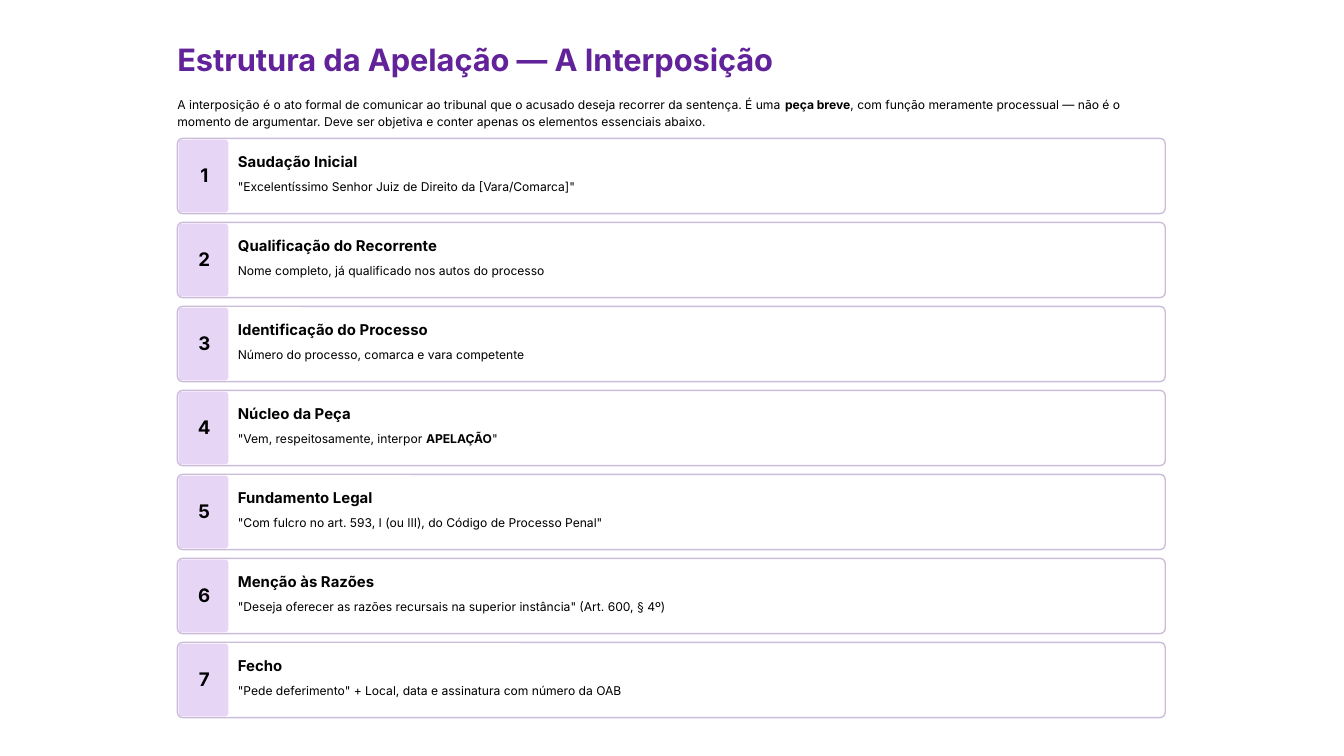
from dataclasses import dataclass

from pptx import Presentation
from pptx.dml.color import RGBColor as RGB
from pptx.enum.shapes import MSO_SHAPE as Shape
from pptx.enum.text import MSO_ANCHOR as Anchor, PP_ALIGN as Align
from pptx.util import Inches, Pt


@dataclass(frozen=True)
class Theme:
    font: str = "Inter"
    title: RGB = RGB(0x62, 0x22, 0x99)
    ink: RGB = RGB(0, 0, 0)
    paper: RGB = RGB(0xFF, 0xFF, 0xFF)
    edge: RGB = RGB(0xCD, 0xBB, 0xDC)
    tint: RGB = RGB(0xE7, 0xD5, 0xF6)
    title_size: float = 16.5
    num_size: float = 10
    head_size: float = 8
    body_size: float = 6.5


class Page:
    def __init__(self, slide, theme):
        self.slide = slide
        self.theme = theme

    def text(self, x, y, w, h, words, size, color=None, bold=False,
             lead=None, wrap=False, center=False):
        """Add a text box; parts between asterisks become bold."""
        box = self.slide.shapes.add_textbox(
            Inches(x), Inches(y), Inches(w), Inches(h))
        frame = box.text_frame
        frame.margin_left = frame.margin_right = 0
        frame.margin_top = frame.margin_bottom = 0
        frame.word_wrap = wrap
        para = frame.paragraphs[0]
        if lead:
            para.line_spacing = Pt(lead)
        if center:
            frame.vertical_anchor = Anchor.MIDDLE
            para.alignment = Align.CENTER
        for i, part in enumerate(words.split("*")):
            run = para.add_run()
            run.text = part
            run.font.name = self.theme.font
            run.font.size = Pt(size)
            run.font.bold = bold or i % 2 == 1
            run.font.color.rgb = color or self.theme.ink

    def panel(self, x, y, w, h, fill, edge=None):
        """Add a rounded rectangle, outlined only when edge is given."""
        shape = self.slide.shapes.add_shape(
            Shape.ROUNDED_RECTANGLE, Inches(x), Inches(y), Inches(w), Inches(h))
        shape.adjustments[0] = 0.07
        shape.shadow.inherit = False
        shape.fill.solid()
        shape.fill.fore_color.rgb = fill
        if edge:
            shape.line.color.rgb = edge
            shape.line.width = Pt(0.75)
        else:
            shape.line.fill.background()

    def card(self, y, num, head, wide, body):
        t = self.theme
        self.panel(LEFT, y, WIDTH, 0.56, t.paper, t.edge)
        self.panel(LEFT + 0.01, y + 0.01, 0.37, 0.54, t.tint)
        self.text(LEFT + 0.13, y + 0.19, 0.14, 0.17, str(num), t.num_size,
                  bold=True, center=True)
        self.text(LEFT + 0.45, y + 0.1, wide, 0.15, head, t.head_size,
                  bold=True, lead=10)
        self.text(LEFT + 0.45, y + 0.29, 6.8, 0.13, body, t.body_size, lead=9)


LEFT, WIDTH = 1.32, 7.35
FIRST, LAST = 1.03, 4.78
TITLE = "Estrutura da Apelação — A Interposição"
INTRO = ("A interposição é o ato formal de comunicar ao tribunal que o acusado "
         "deseja recorrer da sentença. É uma *peça breve*, com função meramente "
         "processual — não é o momento de argumentar. Deve ser objetiva e conter "
         "apenas os elementos essenciais abaixo.")
STEPS = [
    ("Saudação Inicial", 1.17,
     '"Excelentíssimo Senhor Juiz de Direito da [Vara/Comarca]"'),
    ("Qualificação do Recorrente", 1.55,
     "Nome completo, já qualificado nos autos do processo"),
    ("Identificação do Processo", 1.48,
     "Número do processo, comarca e vara competente"),
    ("Núcleo da Peça", 1.17, '"Vem, respeitosamente, interpor *APELAÇÃO*"'),
    ("Fundamento Legal", 1.17,
     '"Com fulcro no art. 593, I (ou III), do Código de Processo Penal"'),
    ("Menção às Razões", 1.17,
     '"Deseja oferecer as razões recursais na superior instância" (Art. 600, § 4º)'),
    ("Fecho", 1.17,
     '"Pede deferimento" + Local, data e assinatura com número da OAB'),
]


def main():
    deck = Presentation()
    deck.slide_width = Inches(10)
    deck.slide_height = deck.slide_width * 9 // 16
    theme = Theme()
    page = Page(deck.slides.add_slide(deck.slide_layouts[6]), theme)
    page.text(LEFT, 0.29, 4.53, 0.29, TITLE, theme.title_size,
              color=theme.title, bold=True, lead=20.5)
    page.text(LEFT, 0.71, WIDTH, 0.25, INTRO, theme.body_size,
              lead=9, wrap=True)
    pitch = (LAST - FIRST) / (len(STEPS) - 1)
    for i, (head, wide, body) in enumerate(STEPS):
        page.card(FIRST + i * pitch, i + 1, head, wide, body)
    deck.save("out.pptx")


if __name__ == "__main__":
    main()
